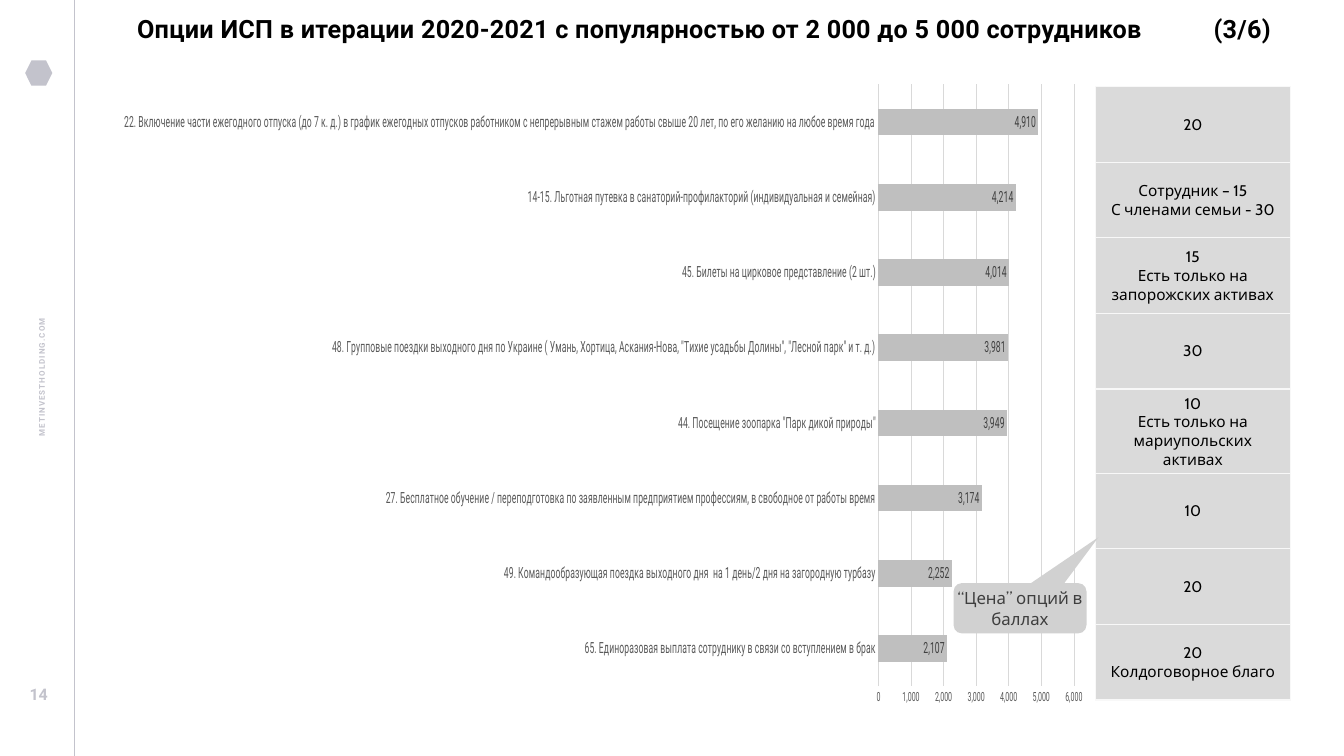
"""Build the slide on benefit options chosen by 2 000 to 5 000 employees."""
from dataclasses import dataclass

from lxml.etree import SubElement
from pptx import Presentation
from pptx.chart.data import CategoryChartData
from pptx.dml.color import RGBColor
from pptx.enum.chart import XL_CHART_TYPE, XL_LABEL_POSITION, XL_TICK_MARK
from pptx.enum.shapes import MSO_CONNECTOR, MSO_SHAPE
from pptx.enum.text import MSO_ANCHOR, MSO_AUTO_SIZE, PP_ALIGN
from pptx.oxml import parse_xml
from pptx.oxml.ns import nsdecls, qn
from pptx.util import Pt

BLACK = RGBColor(0x00, 0x00, 0x00)
RAIL_GREY = RGBColor(0xC3, 0xC3, 0xCC)
GRID_GREY = RGBColor(0xD9, 0xD9, 0xD9)
BAR_GREY = RGBColor(0xBF, 0xBF, 0xBF)
AXIS_GREY = RGBColor(0x59, 0x59, 0x59)
VALUE_GREY = RGBColor(0x40, 0x40, 0x40)
CELL_GREY = RGBColor(0xDA, 0xDA, 0xDA)
BORDER_GREY = RGBColor(0xF8, 0xF8, 0xF8)
CALLOUT_GREY = RGBColor(0xD1, 0xD1, 0xD1)
CALLOUT_TEXT = RGBColor(0x3E, 0x3E, 0x3E)


@dataclass
class Option:
    """One benefit option, its popularity and its price lines."""
    name: str
    employees: int
    price: list[str]


@dataclass
class RailLabel:
    """One label on the left rail."""
    text: str
    left: float
    top: float
    width: float
    height: float
    size: float
    rotation: float = 0
    tracking: int = 0
    line_spacing: float = 1


OPTIONS = [
    Option("22. Включение части ежегодного отпуска (до 7 к. д.) в график ежегодных отпусков "
           "работником с непрерывным стажем работы свыше 20 лет, по его желанию на любое время года",
           4910, ["20"]),
    Option("14-15. Льготная путевка в санаторий-профилакторий (индивидуальная и семейная)",
           4214, ["Сотрудник – 15", "С членами семьи - 30"]),
    Option("45. Билеты на цирковое представление (2 шт.)",
           4014, ["15", "Есть только на запорожских активах"]),
    Option("48. Групповые поездки выходного дня по Украине ( Умань, Хортица, Аскания-Нова, "
           "\"Тихие усадьбы Долины\", \"Лесной парк\" и т. д.)", 3981, ["30"]),
    Option("44. Посещение зоопарка \"Парк дикой природы\"",
           3949, ["10", "Есть только на мариупольских активах"]),
    Option("27. Бесплатное обучение / переподготовка по заявленным предприятием профессиям, "
           "в свободное от работы время", 3174, ["10"]),
    Option("49. Командообразующая поездка выходного дня  на 1 день/2 дня на загородную турбазу",
           2252, ["20"]),
    Option("65. Единоразовая выплата сотруднику в связи со вступлением в брак",
           2107, ["20", "Колдоговорное благо"]),
]

RAIL_LABELS = [
    RailLabel("METINVESTHOLDING.COM", -187.2, 259.9, 430.6, 19.4, 5.7, 270, 80, 1.5),
    RailLabel("14", 0, 485.3, 55.4, 20.9, 11.4),
]


def style_font(font, name: str, size: float, color: RGBColor, bold: bool = False) -> None:
    """Set face, size, colour and weight."""
    font.name, font.size, font.bold = name, Pt(size), bold
    font.color.rgb = color


def track(para, spacing: int) -> None:
    """Set letter spacing, in hundredths of a point."""
    para._p.pPr.find(qn("a:defRPr")).set("spc", str(spacing))


def clear_margins(frame) -> None:
    """Remove the insets of a text frame."""
    frame.margin_left = frame.margin_right = frame.margin_top = frame.margin_bottom = 0


def fill_plain(shape, color: RGBColor) -> None:
    """Give a shape a flat fill with no outline or shadow."""
    shape.shadow.inherit = False
    shape.fill.solid()
    shape.fill.fore_color.rgb = color
    shape.line.fill.background()


def add_rail(page) -> None:
    """Draw the left rail: emblem, divider, web address and page number."""
    emblem = page.shapes.add_shape(MSO_SHAPE.HEXAGON, Pt(18), Pt(43.2), Pt(19.4), Pt(18))
    fill_plain(emblem, RAIL_GREY)
    divider = page.shapes.add_connector(MSO_CONNECTOR.STRAIGHT, Pt(53.3), Pt(540), Pt(53.3), Pt(0))
    divider.line.color.rgb = RAIL_GREY
    divider.line.width = Pt(0.5)
    SubElement(divider._element.spPr, qn("a:effectLst"))
    for label in RAIL_LABELS:
        box = page.shapes.add_textbox(Pt(label.left), Pt(label.top), Pt(label.width), Pt(label.height))
        box.rotation = label.rotation
        frame = box.text_frame
        frame.word_wrap = True
        frame.vertical_anchor = MSO_ANCHOR.MIDDLE
        clear_margins(frame)
        para = frame.paragraphs[0]
        para.text = label.text
        para.alignment = PP_ALIGN.CENTER
        para.line_spacing = label.line_spacing
        style_font(para.font, "Roboto", label.size, RAIL_GREY, True)
        track(para, label.tracking)


def add_title(page) -> None:
    """Place the title, with its part number at a tab stop."""
    title = page.shapes.title
    title.left, title.top, title.width, title.height = Pt(97.9), Pt(9.4), Pt(846), Pt(30.2)
    frame = title.text_frame
    frame.auto_size = MSO_AUTO_SIZE.NONE
    frame.vertical_anchor = MSO_ANCHOR.TOP
    clear_margins(frame)
    para = frame.paragraphs[0]
    para.text = "Опции ИСП в итерации 2020-2021 с популярностью от 2 000 до 5 000 сотрудников\t(3/6)"
    para.alignment = PP_ALIGN.LEFT
    tabs = SubElement(para._p.get_or_add_pPr(), qn("a:tabLst"))
    SubElement(tabs, qn("a:tab"), pos=str(Pt(769)), algn="l")
    style_font(para.font, "Roboto", 18, BLACK, True)
    track(para, 20)


def add_popularity_chart(page) -> None:
    """Draw the bars, the most popular option on top."""
    data = CategoryChartData(number_format="#,##0")
    ascending = OPTIONS[::-1]
    data.categories = [option.name for option in ascending]
    data.add_series("Series 1", [option.employees for option in ascending])
    chart = page.shapes.add_chart(XL_CHART_TYPE.BAR_CLUSTERED, Pt(88.6), Pt(51.1),
                                  Pt(694), Pt(462.2), data).chart
    chart.has_legend = chart.has_title = False
    style_font(chart.font, "Roboto", 10, BLACK)
    plot = chart.plots[0]
    plot.vary_by_categories = False
    plot.gap_width = 182
    fill = plot.series[0].format.fill
    fill.solid()
    fill.fore_color.rgb = BAR_GREY
    plot.has_data_labels = True
    labels = plot.data_labels
    labels.show_value = True
    labels.position = XL_LABEL_POSITION.INSIDE_END
    labels.number_format, labels.number_format_is_linked = "#,##0", False
    style_font(labels.font, "Roboto", 11, VALUE_GREY)

    for axis, size in ((chart.category_axis, 11), (chart.value_axis, 9)):
        axis.major_tick_mark = axis.minor_tick_mark = XL_TICK_MARK.NONE
        style_font(axis.tick_labels.font, "Roboto", size, AXIS_GREY)
    values = chart.value_axis
    values.minimum_scale, values.maximum_scale, values.major_unit = 0, 6000, 1000
    values.tick_labels.number_format, values.tick_labels.number_format_is_linked = "#,##0", False
    values.format.line.fill.background()
    for line in (chart.category_axis.format.line, values.major_gridlines.format.line):
        line.color.rgb = GRID_GREY
        line.width = Pt(0.75)

    chart.element.xpath("//c:catAx/c:txPr/a:bodyPr")[0].set("rot", "-60000000")
    area = chart.element.xpath("//c:plotArea")[0]
    for layout in area.findall(qn("c:layout")):
        area.remove(layout)
    edges = {"layoutTarget": "inner", "xMode": "edge", "yMode": "edge",
             "x": 0.6, "y": 0.02, "w": 0.36, "h": 0.93}
    parts = "".join(f'<c:{name} val="{value}"/>' for name, value in edges.items())
    area.insert(0, parse_xml(f'<c:layout {nsdecls("c")}><c:manualLayout>{parts}</c:manualLayout></c:layout>'))


def add_price_table(page) -> None:
    """Draw the column of prices, one row per option."""
    table = page.shapes.add_table(len(OPTIONS), 1, Pt(782.6), Pt(61.9), Pt(139), Pt(432)).table
    table.first_row = table.horz_banding = False
    for row, option in enumerate(OPTIONS):
        cell = table.cell(row, 0)
        cell.text = "\n".join(option.price)
        cell.vertical_anchor = MSO_ANCHOR.MIDDLE
        cell.fill.solid()
        cell.fill.fore_color.rgb = CELL_GREY
        for para in cell.text_frame.paragraphs:
            para.alignment = PP_ALIGN.CENTER
            style_font(para.font, "Cabin", 11, BLACK)
        for index, side in enumerate("LRTB"):
            cell._tc.tcPr.insert(index, parse_xml(
                f'<a:ln{side} {nsdecls("a")} w="{Pt(1)}"><a:solidFill>'
                f'<a:srgbClr val="{BORDER_GREY}"/></a:solidFill></a:ln{side}>'))


def add_price_callout(page) -> None:
    """Draw the callout that explains the price column."""
    callout = page.shapes.add_shape(MSO_SHAPE.ROUNDED_RECTANGULAR_CALLOUT,
                                    Pt(681.1), Pt(416.5), Pt(95), Pt(36))
    for index, value in enumerate((0.59, -1.41, 0.17)):
        callout.adjustments[index] = value
    fill_plain(callout, CALLOUT_GREY)
    frame = callout.text_frame
    frame.word_wrap = True
    frame.vertical_anchor = MSO_ANCHOR.MIDDLE
    clear_margins(frame)
    para = frame.paragraphs[0]
    para.text = "“Цена” опций в баллах"
    para.alignment = PP_ALIGN.CENTER
    style_font(para.font, "Cabin", 12, CALLOUT_TEXT)


def main() -> None:
    """Build and save the deck."""
    deck = Presentation()
    deck.slide_width, deck.slide_height = Pt(960), Pt(540)
    page = deck.slides.add_slide(deck.slide_layouts[5])
    for draw in (add_rail, add_popularity_chart, add_title, add_price_table, add_price_callout):
        draw(page)
    deck.save("out.pptx")


if __name__ == "__main__":
    main()
